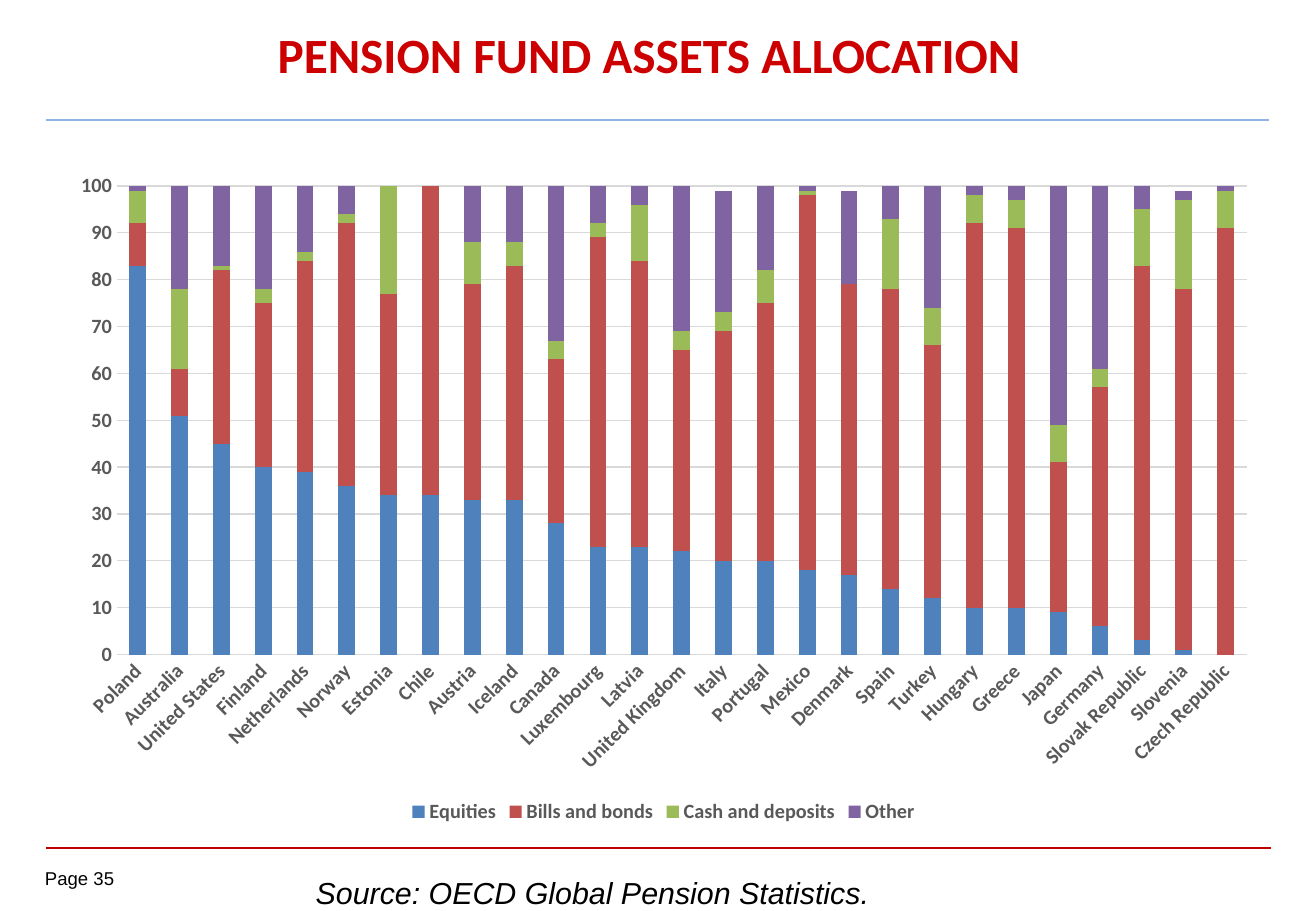
from typing import NamedTuple

from lxml.etree import SubElement
from pptx import Presentation
from pptx.chart.data import CategoryChartData
from pptx.dml.color import RGBColor
from pptx.enum.chart import XL_CHART_TYPE as ChartType
from pptx.enum.chart import XL_LEGEND_POSITION as LegendPos
from pptx.enum.chart import XL_TICK_MARK as TickMark
from pptx.enum.shapes import MSO_CONNECTOR as Connector
from pptx.enum.text import MSO_ANCHOR as Anchor
from pptx.enum.text import PP_ALIGN as Align
from pptx.oxml import parse_xml
from pptx.oxml.ns import nsdecls, qn
from pptx.slide import Slide
from pptx.util import Cm, Pt

RED = RGBColor(0xCC, 0x00, 0x00)
DARK_RED = RGBColor(0xC0, 0x00, 0x00)
LIGHT_BLUE = RGBColor(0x8E, 0xB4, 0xE3)
BLACK = RGBColor(0x00, 0x00, 0x00)
GREY = RGBColor(0x59, 0x59, 0x59)
LIGHT_GREY = RGBColor(0xD9, 0xD9, 0xD9)
BLUE = RGBColor(0x4F, 0x81, 0xBD)
BRICK = RGBColor(0xC0, 0x50, 0x4D)
GREEN = RGBColor(0x9B, 0xBB, 0x59)
PURPLE = RGBColor(0x80, 0x64, 0xA2)


class Rule(NamedTuple):
    right: float
    y: float
    color: RGBColor
    weight: float


class Label(NamedTuple):
    text: str
    left: float
    width: float
    height: float
    size: float
    italic: bool
    margin_x: float
    margin_y: float


class AssetClass(NamedTuple):
    name: str
    color: RGBColor
    shares: list[int]


RULE_LEFT = 0.97
RULES = [Rule(26.57, 17.73, DARK_RED, 1), Rule(26.52, 2.51, LIGHT_BLUE, 1.5)]
FOOTER_TOP = 18.14
LABELS = [
    Label("Page 35", 0.94, 1.85, 0.56, 11, False, 0, 0),
    Label("Source: OECD Global Pension Statistics.", 6.35, 13.82, 1.02, 18, True, 0.25, 0.13),
]
COUNTRIES = [
    "Poland", "Australia", "United States", "Finland", "Netherlands", "Norway",
    "Estonia", "Chile", "Austria", "Iceland", "Canada", "Luxembourg", "Latvia",
    "United Kingdom", "Italy", "Portugal", "Mexico", "Denmark", "Spain", "Turkey",
    "Hungary", "Greece", "Japan", "Germany", "Slovak Republic", "Slovenia",
    "Czech Republic",
]
ASSET_CLASSES = [
    AssetClass("Equities", BLUE, [
        83, 51, 45, 40, 39, 36, 34, 34, 33, 33, 28, 23, 23, 22,
        20, 20, 18, 17, 14, 12, 10, 10, 9, 6, 3, 1, 0]),
    AssetClass("Bills and bonds", BRICK, [
        9, 10, 37, 35, 45, 56, 43, 66, 46, 50, 35, 66, 61, 43,
        49, 55, 80, 62, 64, 54, 82, 81, 32, 51, 80, 77, 91]),
    AssetClass("Cash and deposits", GREEN, [
        7, 17, 1, 3, 2, 2, 23, 0, 9, 5, 4, 3, 12, 4,
        4, 7, 1, 0, 15, 8, 6, 6, 8, 4, 12, 19, 8]),
    AssetClass("Other", PURPLE, [
        1, 22, 18, 23, 14, 6, 0, 1, 12, 12, 33, 8, 4, 31,
        26, 19, 2, 20, 8, 26, 3, 3, 51, 39, 5, 2, 1]),
]
PLOT_AREA = {"x": 0.05, "y": 0.04, "w": 0.93, "h": 0.7}


def style_font(font, name: str, size: float, color: RGBColor,
               bold: bool = False, italic: bool = False) -> None:
    font.name, font.size, font.bold, font.italic = name, Pt(size), bold, italic
    font.color.rgb = color


def add_title(s: Slide, text: str) -> None:
    title = s.shapes.title
    title.left, title.top, title.width, title.height = Cm(0.97), Cm(0.23), Cm(25.2), Cm(1.8)
    tf = title.text_frame
    tf.text = text
    tf.vertical_anchor = Anchor.MIDDLE
    p = tf.paragraphs[0]
    p.alignment = Align.CENTER
    style_font(p.runs[0].font, "Calibri", 29.2, RED, bold=True)


def add_rule(s: Slide, rule: Rule) -> None:
    line = s.shapes.add_connector(
        Connector.STRAIGHT, Cm(RULE_LEFT), Cm(rule.y), Cm(rule.right), Cm(rule.y))
    line.line.color.rgb = rule.color
    line.line.width = Pt(rule.weight)
    SubElement(line._element.spPr, qn("a:effectLst"))


def add_label(s: Slide, label: Label) -> None:
    box = s.shapes.add_textbox(
        Cm(label.left), Cm(FOOTER_TOP), Cm(label.width), Cm(label.height))
    tf = box.text_frame
    tf.word_wrap = True
    tf.margin_left = tf.margin_right = Cm(label.margin_x)
    tf.margin_top = tf.margin_bottom = Cm(label.margin_y)
    tf.text = label.text
    style_font(tf.paragraphs[0].runs[0].font, "Arial", label.size, BLACK, italic=label.italic)


def fix_plot_area(chart) -> None:
    """Pin the inner plot area to fixed fractions of the chart."""
    plot_area = chart._chartSpace.find(".//" + qn("c:plotArea"))
    for layout in plot_area.findall(qn("c:layout")):
        plot_area.remove(layout)
    modes = "".join(f'<c:{axis}Mode val="edge"/>' for axis in "xy")
    sizes = "".join(f'<c:{key} val="{value}"/>' for key, value in PLOT_AREA.items())
    plot_area.insert(0, parse_xml(
        f'<c:layout {nsdecls("c")}><c:manualLayout><c:layoutTarget val="inner"/>'
        f"{modes}{sizes}</c:manualLayout></c:layout>"))


def add_allocation_chart(s: Slide) -> None:
    data = CategoryChartData(number_format="0")
    data.categories = COUNTRIES
    for asset in ASSET_CLASSES:
        data.add_series(asset.name, asset.shares)
    chart = s.shapes.add_chart(
        ChartType.COLUMN_STACKED, Cm(1.17), Cm(3.33), Cm(25.4), Cm(14), data).chart
    chart.has_title = False
    style_font(chart.font, "Calibri", 10, BLACK)

    plot = chart.plots[0]
    plot.gap_width, plot.overlap = 150, 100
    plot.vary_by_categories = False
    for series, asset in zip(plot.series, ASSET_CLASSES):
        series.format.fill.solid()
        series.format.fill.fore_color.rgb = asset.color

    chart.has_legend = True
    chart.legend.position = LegendPos.BOTTOM
    chart.legend.include_in_layout = False
    style_font(chart.legend.font, "Calibri", 12, GREY, bold=True)

    countries, shares = chart.category_axis, chart.value_axis
    for axis in (countries, shares):
        axis.major_tick_mark = axis.minor_tick_mark = TickMark.NONE
        style_font(axis.tick_labels.font, "Calibri", 12, GREY, bold=True)
    countries._element.find(".//" + qn("a:bodyPr")).set("rot", "-2700000")
    shares.minimum_scale, shares.maximum_scale, shares.major_unit = 0, 100, 10
    shares.tick_labels.number_format = "0"
    shares.tick_labels.number_format_is_linked = False
    shares.format.line.fill.background()
    for line in (countries.format.line, shares.major_gridlines.format.line):
        line.color.rgb = LIGHT_GREY
        line.width = Pt(0.75)
    fix_plot_area(chart)


def main() -> None:
    prs = Presentation()
    prs.slide_width, prs.slide_height = Cm(27.51), Cm(19.05)
    s = prs.slides.add_slide(prs.slide_layouts[5])
    for rule in RULES:
        add_rule(s, rule)
    add_title(s, "PENSION FUND ASSETS ALLOCATION")
    add_allocation_chart(s)
    for label in LABELS:
        add_label(s, label)
    prs.save("out.pptx")


if __name__ == "__main__":
    main()
